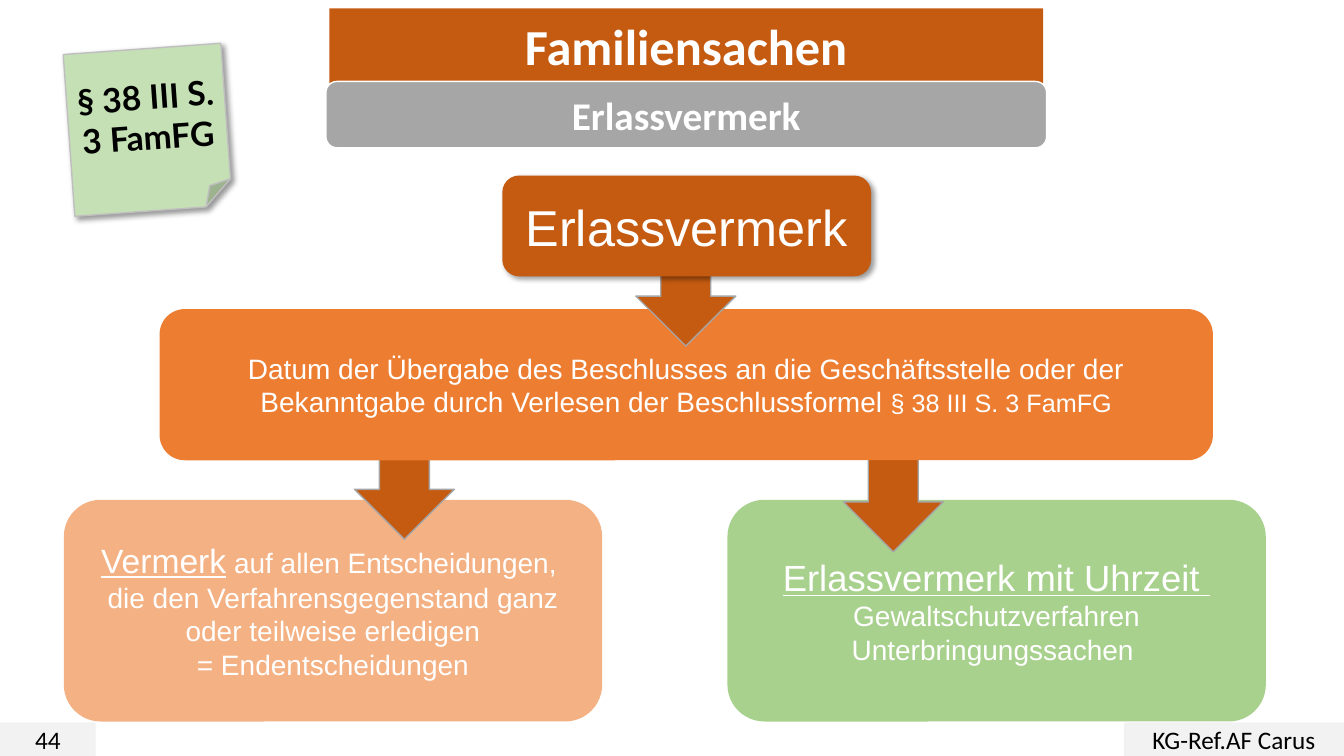
from dataclasses import dataclass

from lxml import etree
from pptx import Presentation
from pptx.dml.color import RGBColor
from pptx.enum.shapes import MSO_SHAPE
from pptx.enum.text import MSO_ANCHOR, MSO_AUTO_SIZE, PP_ALIGN
from pptx.oxml.ns import qn
from pptx.util import Emu, Inches, Pt

ROUNDED = MSO_SHAPE.ROUNDED_RECTANGLE
RECTANGLE = MSO_SHAPE.RECTANGLE
FOLDED = MSO_SHAPE.FOLDED_CORNER
DOWN_ARROW = MSO_SHAPE.DOWN_ARROW
MIDDLE = MSO_ANCHOR.MIDDLE
CENTER = PP_ALIGN.CENTER
NO_AUTOFIT = MSO_AUTO_SIZE.NONE

WIDTH, HEIGHT = Inches(13.33), Inches(7.5)
COLUMNS, ROWS = 16, 9


@dataclass(frozen=True)
class Theme:
    """Colours, fonts and type sizes of the slide."""
    rust: str = "C55A11"
    orange: str = "ED7D31"
    peach: str = "F4B183"
    green: str = "A9D18E"
    note_green: str = "C5E0B4"
    grey: str = "A6A6A6"
    note_edge: str = "BFBFBF"
    footer: str = "F2F2F2"
    white: str = "FFFFFF"
    black: str = "000000"
    body_font: str = "Arial"
    head_font: str = "Calibri"
    note_font: str = "Lato"
    title: int = 36
    subtitle: int = 28
    lead: int = 26
    emphasis: int = 24
    body: int = 20
    small: int = 18


THEME = Theme()


@dataclass(frozen=True)
class Box:
    """An area in grid columns and rows."""
    col: float
    row: float
    cols: float
    rows: float

    def inner(self, col, row, cols, rows):
        """Return an area placed relative to this one."""
        return Box(self.col + col, self.row + row, cols, rows)

    def lengths(self):
        """Return left, top, width and height as slide lengths."""
        return (Emu(int(self.col * WIDTH / COLUMNS)), Emu(int(self.row * HEIGHT / ROWS)),
                Emu(int(self.cols * WIDTH / COLUMNS)), Emu(int(self.rows * HEIGHT / ROWS)))


@dataclass(frozen=True)
class Span:
    """A run of text with its size and emphasis."""
    text: str
    size: int
    bold: bool = False
    underline: bool = False


def write(shape, paragraphs, font, color, inset=0.1):
    """Fill a shape with centred paragraphs, run by run."""
    frame = shape.text_frame
    frame.word_wrap = True
    frame.auto_size = NO_AUTOFIT
    frame.vertical_anchor = MIDDLE
    frame.margin_left = frame.margin_right = Inches(inset)
    frame.margin_top = frame.margin_bottom = 0
    for index, spans in enumerate(paragraphs):
        paragraph = frame.add_paragraph() if index else frame.paragraphs[0]
        paragraph.alignment = CENTER
        for span in spans:
            run = paragraph.add_run()
            run.text = span.text
            run.font.name = font
            run.font.size = Pt(span.size)
            run.font.bold = span.bold
            run.font.underline = span.underline
            run.font.color.rgb = RGBColor.from_string(color)


def paint(shape, fill, line=None):
    """Give a shape a solid fill and an optional outline."""
    shape.fill.solid()
    shape.fill.fore_color.rgb = RGBColor.from_string(fill)
    if line:
        shape.line.color.rgb = RGBColor.from_string(line)
        shape.line.width = Pt(1)
    else:
        shape.line.fill.background()


def add_block(slide, box, kind, fill, line=None):
    """Add a flat preset shape."""
    block = slide.shapes.add_shape(kind, *box.lengths())
    block.shadow.inherit = False
    paint(block, fill, line)
    return block


def cast_shadow(shape):
    """Add a soft shadow to the lower right."""
    effects = shape.element.spPr.find(qn("a:effectLst"))
    shadow = etree.SubElement(effects, qn("a:outerShdw"), blurRad=str(Pt(4)), dist=str(Pt(3)),
                              dir="2700000", algn="tl", rotWithShape="0")
    tint = etree.SubElement(shadow, qn("a:srgbClr"), val=THEME.black)
    etree.SubElement(tint, qn("a:alpha"), val="40000")


def add_header(slide, box):
    """Place the title and the subtitle bar beneath it."""
    title = slide.shapes.title
    title.left, title.top, title.width, title.height = box.inner(0.04, 0, 8.5, 0.89).lengths()
    outline = etree.Element(qn("a:prstGeom"), prst="roundRect")
    etree.SubElement(outline, qn("a:avLst"))
    title.element.spPr.find(qn("a:xfrm")).addnext(outline)
    paint(title, THEME.rust)
    write(title, [[Span("Familiensachen", THEME.title, bold=True)]], THEME.head_font, THEME.white)
    subtitle = add_block(slide, box.inner(0, 0.87, box.cols, 0.79), ROUNDED,
                         THEME.grey, THEME.white)
    write(subtitle, [[Span("Erlassvermerk", THEME.subtitle, bold=True)]],
          THEME.head_font, THEME.white)


def add_footer(slide, box):
    """Place the page number and the author at both ends."""
    author_cols = 2.62
    for text, col, cols in (("44", 0, 1.14),
                            ("KG-Ref.AF Carus", box.cols - author_cols, author_cols)):
        label = add_block(slide, box.inner(col, 0, cols, box.rows), RECTANGLE, THEME.footer)
        write(label, [[Span(text, THEME.small)]], THEME.head_font, THEME.black)


def add_note(slide, box):
    """Place the tilted note with the legal reference."""
    note = add_block(slide, box, FOLDED, THEME.note_green, THEME.note_edge)
    note.rotation = 355.9
    cast_shadow(note)
    write(note, [[Span("§ 38 III S. 3 FamFG", THEME.emphasis, bold=True)]],
          THEME.note_font, THEME.black, inset=0.05)


def add_arrow(slide, box, col, row):
    """Place a downward arrow within the flow."""
    add_block(slide, box.inner(col, row, 1.19, 1.28), DOWN_ARROW, THEME.rust, THEME.grey)


def add_flow(slide, box):
    """Place the chart from the heading down to the two cards."""
    timed = [[Span("Erlassvermerk mit Uhrzeit ", THEME.lead, underline=True)],
             [Span("Gewaltschutzverfahren", THEME.body)],
             [Span("Unterbringungssachen ", THEME.body)]]
    final = [[Span("Vermerk", THEME.emphasis, underline=True),
              Span(" auf allen Entscheidungen, ", THEME.body)],
             [Span("die den Verfahrensgegenstand ganz oder teilweise erledigen", THEME.body)],
             [Span("= Endentscheidungen", THEME.body)]]
    card_cols, card_rows = 6.41, 2.64
    for text, fill, col, arrow_col, arrow_row in (
            (timed, THEME.green, box.cols - card_cols, 9.28, 3.2),
            (final, THEME.peach, 0, 3.46, 3.05)):
        card = add_block(slide, box.inner(col, box.rows - card_rows, card_cols, card_rows),
                         ROUNDED, fill)
        write(card, text, THEME.body_font, THEME.white)
        add_arrow(slide, box, arrow_col, arrow_row)

    date = add_block(slide, box.inner(1.14, 1.59, 12.54, 1.8), ROUNDED, THEME.orange)
    write(date, [[Span("Datum der Übergabe des Beschlusses an die Geschäftsstelle oder der "
                       "Bekanntgabe durch Verlesen der Beschlussformel ", THEME.body),
                  Span("§ 38 III S. 3 FamFG", THEME.small)]], THEME.body_font, THEME.white)
    add_arrow(slide, box, 6.81, 0.75)
    heading = add_block(slide, box.inner(5.22, 0, 4.39, 1.2), ROUNDED, THEME.rust)
    cast_shadow(heading)
    write(heading, [[Span("Erlassvermerk", THEME.title)]], THEME.body_font, THEME.white)


def main():
    """Build the slide and save it."""
    deck = Presentation()
    deck.slide_width, deck.slide_height = WIDTH, HEIGHT
    slide = deck.slides.add_slide(deck.slide_layouts.get_by_name("Title Only"))
    add_header(slide, Box(3.88, 0.1, 8.58, 1.66))
    add_footer(slide, Box(0, 8.6, COLUMNS, 0.4))
    add_note(slide, Box(0.82, 0.58, 1.88, 1.93))
    add_flow(slide, Box(0.76, 2.09, 14.31, 6.5))
    deck.save("out.pptx")


if __name__ == "__main__":
    main()
